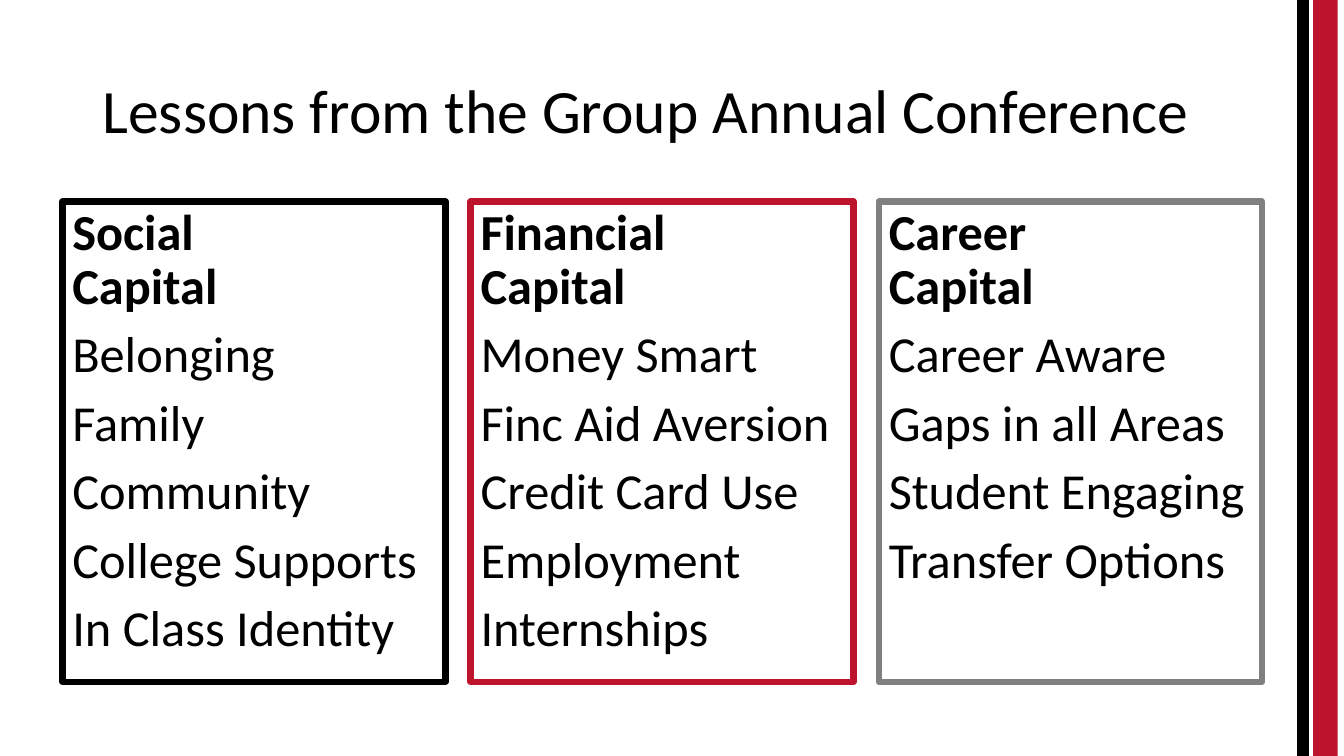
from pptx import Presentation
from pptx.dml.color import RGBColor
from pptx.enum import shapes, text
from pptx.util import Pt

COLOURS = {"black": "000000", "red": "BE132D", "grey": "808080", "white": "FFFFFF"}
WIDTH, HEIGHT = 960, 540

COLUMNS = [
    ("black", "Social\vCapital",
     ["Belonging", "Family", "Community", "College Supports", "In Class Identity"]),
    ("red", "Financial\vCapital",
     ["Money Smart", "Finc Aid Aversion", "Credit Card Use", "Employment", "Internships"]),
    ("grey", "Career\vCapital",
     ["Career Aware", "Gaps in all Areas", "Student Engaging", "Transfer Options"]),
]


class ConferenceSlide:
    font_name = "Calibri"

    def __init__(self, deck):
        self.slide = deck.slides.add_slide(deck.slide_layouts[5])

    def colour(self, name):
        return RGBColor.from_string(COLOURS[name])

    def style(self, paragraph, size, bold=False, before=0):
        paragraph.alignment = text.PP_ALIGN.LEFT
        paragraph.line_spacing = 0.9
        paragraph.space_before = Pt(before)
        paragraph.font.name = self.font_name
        paragraph.font.size = Pt(size)
        paragraph.font.bold = bold
        paragraph.font.color.rgb = self.colour("black")

    def title(self, wording, left, top, width, height):
        heading = self.slide.shapes.title
        heading.left, heading.top = Pt(left), Pt(top)
        heading.width, heading.height = Pt(width), Pt(height)
        frame = heading.text_frame
        frame.text = wording
        frame.auto_size = text.MSO_AUTO_SIZE.NONE
        frame.vertical_anchor = text.MSO_ANCHOR.MIDDLE
        self.style(frame.paragraphs[0], 44)

    def bar(self, colour, left, width):
        stripe = self.slide.shapes.add_shape(
            shapes.MSO_SHAPE.RECTANGLE, Pt(left), Pt(0), Pt(width), Pt(HEIGHT))
        stripe.shadow.inherit = False
        stripe.fill.solid()
        stripe.fill.fore_color.rgb = self.colour(colour)
        stripe.line.fill.background()

    def column(self, colour, heading, lessons, left, top, width, height):
        panel = self.slide.shapes.add_textbox(Pt(left), Pt(top), Pt(width), Pt(height))
        panel.line.color.rgb = self.colour(colour)
        panel.line.width = Pt(4.5)
        frame = panel.text_frame
        frame.word_wrap = True
        frame.text = heading
        self.style(frame.paragraphs[0], 36, bold=True, before=10)
        for lesson in lessons:
            paragraph = frame.add_paragraph()
            paragraph.text = lesson
            self.style(paragraph, 36, before=10)


def main():
    deck = Presentation()
    deck.slide_width, deck.slide_height = Pt(WIDTH), Pt(HEIGHT)
    page = ConferenceSlide(deck)

    # Stripes along the right edge
    for colour, left, width in [("red", 938, 22), ("black", 926.5, 8.5), ("white", 955.5, 4.5)]:
        page.bar(colour, left, width)

    # Title
    page.title("Lessons from the Group Annual Conference", 66, 28.75, 828, 104.4)

    # Three kinds of capital, equally spaced
    for index, (colour, heading, lessons) in enumerate(COLUMNS):
        page.column(colour, heading, lessons, 44.6 + index * 291.6, 144, 273.6, 343)

    deck.save("out.pptx")


if __name__ == "__main__":
    main()
